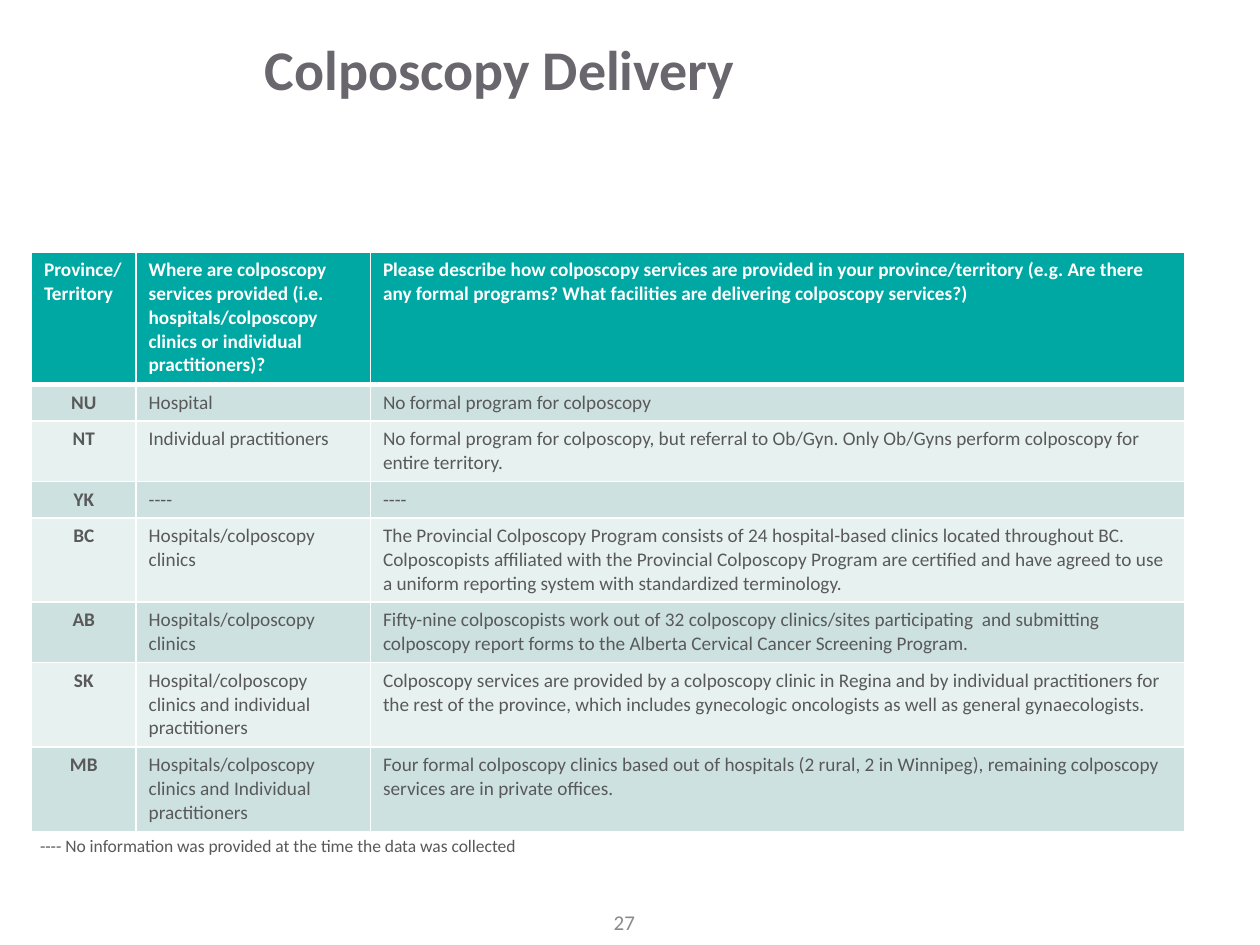
import pptx
import pptx.util
import pptx.dml.color
import pptx.enum.text
import pptx.oxml.ns
import lxml.etree

Inches = pptx.util.Inches
ALIGN = pptx.enum.text.PP_ALIGN
ANCHOR = pptx.enum.text.MSO_ANCHOR

COLORS = {
    "title": "69676D", "text": "595959", "number": "898989", "white": "FFFFFF",
    "header": "00A8A4", "odd": "CCE1E0", "even": "E7F1F0",
}

TITLE = "Colposcopy Delivery"
FOOTNOTE = "---- No information was provided at the time the data was collected"
PAGE_NUMBER = "27"

HEADER = (
    "Province/\nTerritory",
    "Where are colposcopy services provided (i.e. hospitals/colposcopy clinics or individual practitioners)?",
    "Please describe how colposcopy services are provided in your province/territory "
    "(e.g. Are there any formal programs? What facilities are delivering colposcopy services?)",
)
PROVINCES = [
    ("NU", "Hospital", "No formal program for colposcopy"),
    ("NT", "Individual practitioners",
     "No formal program for colposcopy, but referral to Ob/Gyn. Only Ob/Gyns perform "
     "colposcopy for entire territory."),
    ("YK", "----", "----"),
    ("BC", "Hospitals/colposcopy clinics",
     "The Provincial Colposcopy Program consists of 24 hospital-based clinics located "
     "throughout BC. Colposcopists affiliated with the Provincial Colposcopy Program are "
     "certified and have agreed to use a uniform reporting system with standardized terminology."),
    ("AB", "Hospitals/colposcopy clinics",
     "Fifty-nine colposcopists work out of 32 colposcopy clinics/sites participating  and "
     "submitting colposcopy report forms to the Alberta Cervical Cancer Screening Program."),
    ("SK", "Hospital/colposcopy clinics and individual practitioners",
     "Colposcopy services are provided by a colposcopy clinic in Regina and by individual "
     "practitioners for the rest of the province, which includes gynecologic oncologists as "
     "well as general gynaecologists."),
    ("MB", "Hospitals/colposcopy clinics and Individual practitioners",
     "Four formal colposcopy clinics based out of hospitals (2 rural, 2 in Winnipeg), "
     "remaining colposcopy services are in private offices."),
]
COLUMN_WIDTHS = [0.83, 1.86, 6.46]
# Row height follows the number of text lines in the row
ROW_LINES = [5, 1, 2, 1, 3, 2, 3, 3]
LINE_HEIGHT, ROW_PADDING = 0.19, 0.1


def write(frame, text, size, color, bold=False, align=ALIGN.LEFT):
    frame.text = text
    frame.word_wrap = True
    values = {"name": "Calibri", "size": pptx.util.Pt(size), "bold": bold}
    for paragraph in frame.paragraphs:
        paragraph.alignment = align
        for name, value in values.items():
            setattr(paragraph.font, name, value)
        paragraph.font.color.rgb = pptx.dml.color.RGBColor.from_string(COLORS[color])


def add_text(slide, box, *style):
    shape = slide.shapes.add_textbox(*map(Inches, box))
    write(shape.text_frame, *style)


def set_borders(cell, widths):
    properties = cell._tc.get_or_add_tcPr()
    qn = pptx.oxml.ns.qn
    for side, width in widths.items():
        line = lxml.etree.SubElement(properties, qn("a:ln" + side), w=str(pptx.util.Pt(width)))
        fill = lxml.etree.SubElement(line, qn("a:solidFill"))
        lxml.etree.SubElement(fill, qn("a:srgbClr"), val=COLORS["white"])


def add_province_table(slide):
    rows = [HEADER] + PROVINCES
    heights = [lines * LINE_HEIGHT + ROW_PADDING for lines in ROW_LINES]
    box = (0.25, 2, sum(COLUMN_WIDTHS), sum(heights))
    table = slide.shapes.add_table(len(rows), len(HEADER), *map(Inches, box)).table
    for column, width in zip(table.columns, COLUMN_WIDTHS):
        column.width = Inches(width)
    for row_index, texts in enumerate(rows):
        table.rows[row_index].height = Inches(heights[row_index])
        is_header = row_index == 0
        fill = "header" if is_header else ("even", "odd")[row_index % 2]
        for column_index, text in enumerate(texts):
            cell = table.cell(row_index, column_index)
            is_code = column_index == 0 and not is_header
            write(cell.text_frame, text, 11, "white" if is_header else "text",
                  is_header or is_code, ALIGN.CENTER if is_code else ALIGN.LEFT)
            set_borders(cell, {"L": 1, "R": 1, "T": 3 if row_index == 1 else 1,
                               "B": 3 if is_header else 1})
            cell.fill.solid()
            cell.fill.fore_color.rgb = pptx.dml.color.RGBColor.from_string(COLORS[fill])


def main():
    presentation = pptx.Presentation()
    presentation.slide_width, presentation.slide_height = Inches(10), Inches(7.5)
    slide = presentation.slides.add_slide(presentation.slide_layouts[5])

    # Title
    title = slide.shapes.title
    title.left, title.top, title.width, title.height = map(Inches, (2, 0, 7.59, 1.08))
    write(title.text_frame, TITLE, 32, "title", True)
    title.text_frame.vertical_anchor = ANCHOR.MIDDLE

    # Table, footnote and page number
    add_province_table(slide)
    add_text(slide, (0.22, 6.58, 4.57, 0.27), FOOTNOTE, 10, "text")
    add_text(slide, (4.33, 7.17, 1.25, 0.3), PAGE_NUMBER, 12, "number", False, ALIGN.CENTER)

    presentation.save("out.pptx")


if __name__ == "__main__":
    main()
